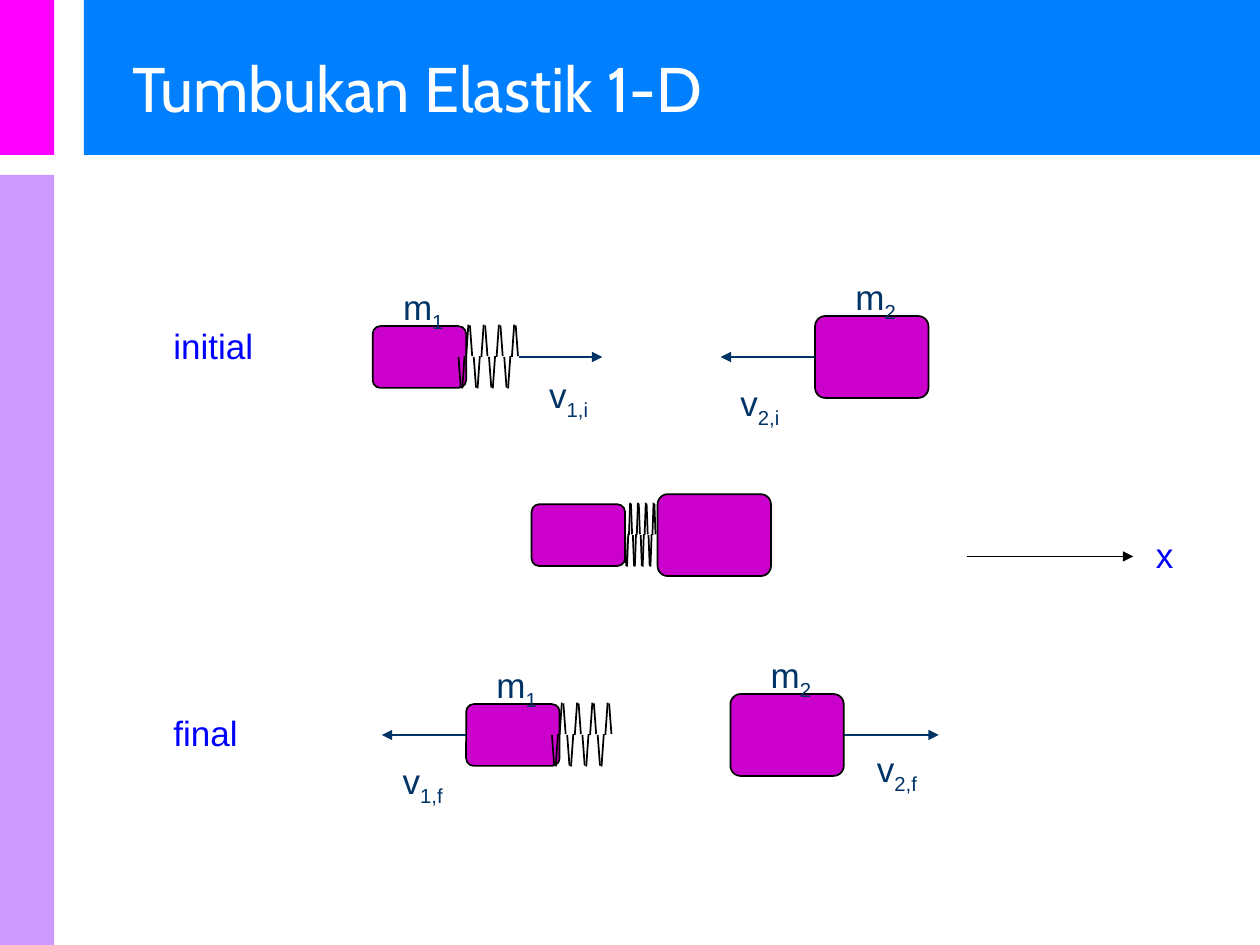
from lxml.etree import SubElement
from pptx import Presentation
from pptx.dml.color import RGBColor
from pptx.enum.shapes import MSO_CONNECTOR as Connector, MSO_SHAPE as Shape
from pptx.enum.text import MSO_ANCHOR as Anchor, MSO_AUTO_SIZE as AutoSize, PP_ALIGN as Align
from pptx.oxml.ns import qn
from pptx.util import Pt

COLORS = {
    "white": "FFFFFF", "banner": "0080FF", "corner": "FF00FF", "sidebar": "CC99FF",
    "block": "CC00CC", "black": "000000", "navy": "003366", "blue": "0000FF",
}
SMALL, LARGE = (53.4, 35.3), (64.8, 46.8)
LEFT_SIDE, RIGHT_SIDE = 1, 3
SPRING_COILS = 4
# Start and end heights of the four strokes of one coil, around the axis
COIL_STROKES = [(0, 17.5), (18, -0.5), (0, -18.5), (-18, -0.5)]


def color(name):
    return RGBColor.from_string(COLORS[name])


def set_values(target, values):
    for name, value in values.items():
        setattr(target, name, value)


def add_box(slide, kind, box, fill, outline=None):
    shape = slide.shapes.add_shape(kind, *map(Pt, box))
    shape.shadow.inherit = False
    shape.fill.solid()
    shape.fill.fore_color.rgb = color(fill)
    if outline:
        shape.line.color.rgb = color(outline)
        shape.line.width = Pt(1)
    else:
        shape.line.fill.background()
    return shape


def add_line(shapes, start, end, line_color, arrow=False):
    line = shapes.add_connector(Connector.STRAIGHT, *map(Pt, (*start, *end)))
    line.line.color.rgb = color(line_color)
    line.line.width = Pt(1)
    properties = line.element.spPr
    if arrow:
        SubElement(properties.find(qn("a:ln")), qn("a:tailEnd"), type="triangle")
    SubElement(properties, qn("a:effectLst"))
    return line


def add_label(slide, left, top, width, text, text_color, subscript=""):
    label = slide.shapes.add_textbox(*map(Pt, (left, top, width, 29)))
    set_values(label.text_frame, {"word_wrap": False, "auto_size": AutoSize.SHAPE_TO_FIT_TEXT})
    paragraph = label.text_frame.paragraphs[0]
    paragraph.line_spacing = 0.9
    for part, is_subscript in ((text, False), (subscript, True)):
        if not part:
            continue
        run = paragraph.add_run()
        run.text = part
        set_values(run.font, {"name": "Arial", "size": Pt(20)})
        run.font.color.rgb = color(text_color)
        if is_subscript:
            run.font._element.set("baseline", "-25000")


def add_frame(slide, width, height):
    """Draw the banner and the side bars around the content area."""
    banner_height, bar_width, banner_left, sidebar_top = 88.5, 31, 48, 100
    for box, fill in [
        ((banner_left, 0, width - banner_left, banner_height), "banner"),
        ((0, 0, bar_width, banner_height), "corner"),
        ((0, sidebar_top, bar_width, height - sidebar_top), "sidebar"),
    ]:
        add_box(slide, Shape.RECTANGLE, box, fill)


def add_title(slide, box, text):
    title = slide.shapes.title
    title.element.getparent().append(title.element)
    set_values(title, dict(zip(("left", "top", "width", "height"), map(Pt, box))))
    frame = title.text_frame
    frame.text = text
    set_values(frame, {"vertical_anchor": Anchor.MIDDLE, "auto_size": AutoSize.NONE,
                       "word_wrap": True})
    paragraph = frame.paragraphs[0]
    paragraph.alignment = Align.LEFT
    set_values(paragraph.runs[0].font, {"name": "Cabin", "size": Pt(36)})
    paragraph.runs[0].font.color.rgb = color("white")


def add_spring(slide, left, axis, width):
    strokes = slide.shapes.add_group_shape().shapes
    pitch = width / (len(COIL_STROKES) * SPRING_COILS - 0.4)
    for index, (start, end) in enumerate(COIL_STROKES * SPRING_COILS):
        x = left + index * pitch
        add_line(strokes, (x, axis + start), (x + 0.6 * pitch, axis + end), "black")


def add_block(slide, left, axis, size, mass=""):
    """Centre a block on the axis, with its mass label above it."""
    width, height = size
    top = axis - height / 2
    block = add_box(slide, Shape.ROUNDED_RECTANGLE, (left, top, width, height), "block", "black")
    block.adjustments[0] = 0.125
    if mass:
        add_label(slide, left + (width - 33) / 2, top - 26.2, 38, "m", "navy", mass)
    return block


def add_moving_pair(slide, axis, small_left, large_left, caption, caption_box):
    """Draw both blocks apart, with the relaxed spring on the small one."""
    add_label(slide, *caption_box, caption, "blue")
    small = add_block(slide, small_left, axis, SMALL, "1")
    large = add_block(slide, large_left, axis, LARGE, "2")
    add_spring(slide, small_left + 49, axis, 34)
    return small, large


def add_velocity(slide, axis, start, end, label_at, subscript, block=None, side=None):
    arrow = add_line(slide.shapes, (start, axis), (end, axis), "navy", arrow=True)
    if block is not None:
        arrow.begin_connect(block, side)
    add_label(slide, *label_at, 38.5, "v", "navy", subscript)


def add_initial_state(slide, axis):
    _, large = add_moving_pair(slide, axis, 213, 465.8, "initial", (92, axis - 19.6, 60))
    add_velocity(slide, axis, 296.8, 344.2, (306.7, axis + 6.2), "1,i")
    add_velocity(slide, axis, 465.8, 411.8, (416, axis + 10.8), "2,i", large, LEFT_SIDE)


def add_contact_state(slide, axis):
    small_left, large_left = 303.8, 375.8
    add_block(slide, large_left, axis, LARGE)
    add_block(slide, small_left, axis, SMALL)
    add_spring(slide, small_left + SMALL[0], axis, 17.4)


def add_final_state(slide, axis):
    small, large = add_moving_pair(slide, axis, 266.4, 417.4, "final", (92, axis - 14, 51))
    add_velocity(slide, axis, 266.4, 218.2, (223, axis + 10.8), "1,f", small, LEFT_SIDE)
    add_velocity(slide, axis, 482.2, 536.4, (494, axis + 4.2), "2,f", large, RIGHT_SIDE)


def add_direction(slide, left, axis, length):
    add_line(slide.shapes, (left, axis), (left + length, axis), "black", arrow=True)
    add_label(slide, left + length + 5.8, axis - 13.8, 24.5, "x", "blue")


def main():
    presentation = Presentation()
    set_values(presentation, {"slide_width": Pt(720), "slide_height": Pt(540)})
    slide = presentation.slides.add_slide(presentation.slide_layouts[5])
    slide.background.fill.solid()
    slide.background.fill.fore_color.rgb = color("white")

    add_frame(slide, 720, 540)
    add_title(slide, (68.4, 22.3, 643, 55.4), "Tumbukan Elastik 1-D")
    add_initial_state(slide, 204)
    add_contact_state(slide, 305.8)
    add_direction(slide, 552.4, 318, 95.2)
    add_final_state(slide, 420)
    presentation.save("out.pptx")


if __name__ == "__main__":
    main()
